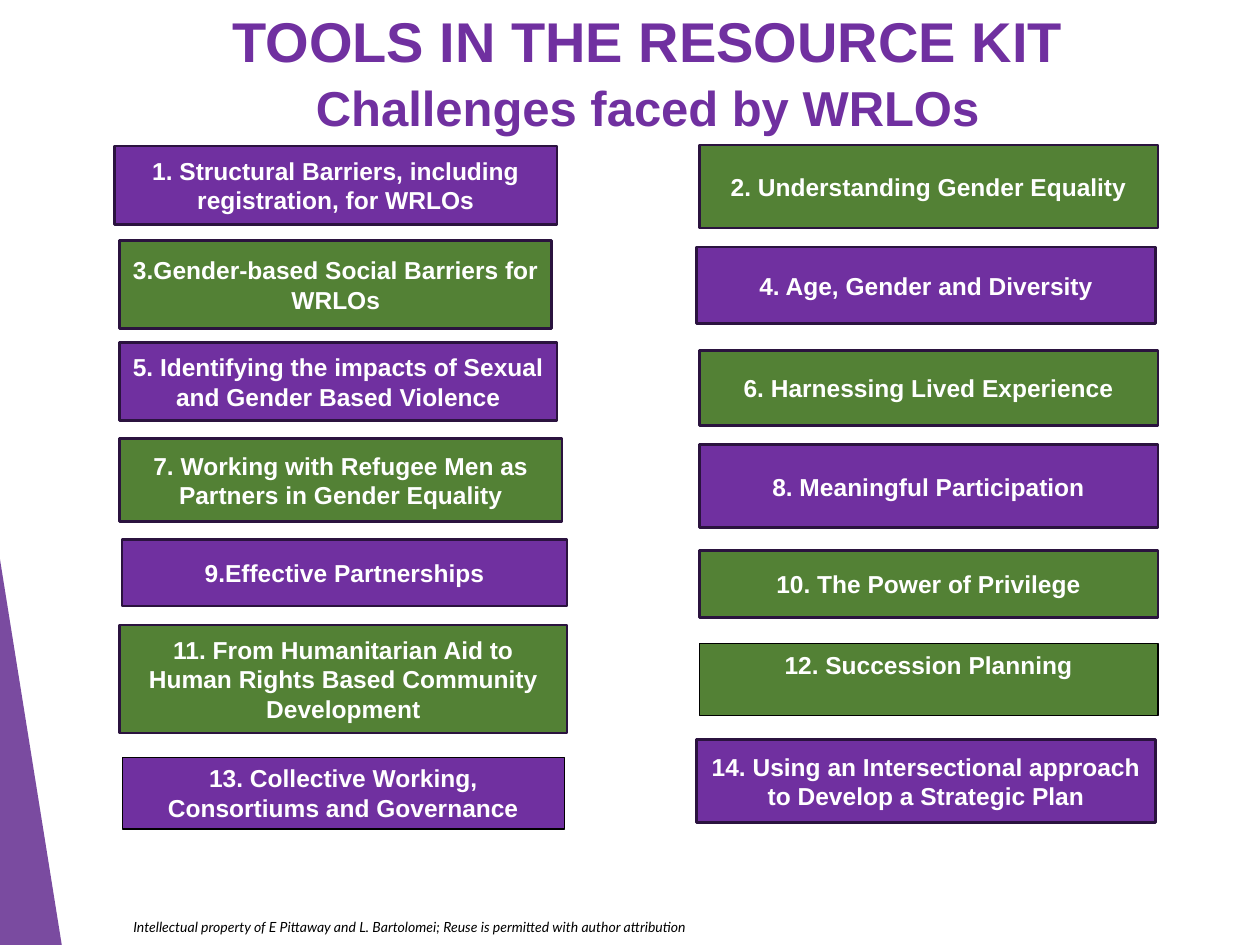
"""Build the slide listing the resource kit tools on challenges faced by WRLOs."""
from lxml import etree
from pptx import Presentation
from pptx.dml.color import RGBColor
from pptx.enum.shapes import MSO_SHAPE
from pptx.enum.text import MSO_ANCHOR, MSO_AUTO_SIZE, PP_ALIGN
from pptx.oxml.ns import qn
from pptx.util import Inches, Pt

COLORS = {
    "purple": "7030A0",
    "green": "538135",
    "edge": "2B133F",
    "wedge": "632C90",
    "white": "FFFFFF",
    "black": "000000",
}


def color(name):
    return RGBColor.from_string(COLORS[name])


def write(paragraph, text, size=14, font="Arial", fill="white", bold=True,
          italic=False, align=PP_ALIGN.CENTER):
    paragraph.alignment = align
    run = paragraph.add_run()
    run.text = text
    run.font.size = Pt(size)
    run.font.name = font
    run.font.bold = bold
    run.font.italic = italic
    run.font.color.rgb = color(fill)


prs = Presentation()
prs.slide_width, prs.slide_height = Inches(10), Inches(7.5)
slide = prs.slides.add_slide(prs.slide_layouts[5])

outline = slide.shapes.build_freeform(0, Inches(4.44))
outline.add_line_segments([(Inches(0.49), Inches(7.5)), (0, Inches(7.5))], close=True)
wedge = outline.convert_to_shape()
wedge.shadow.inherit = False
wedge.line.fill.background()
wedge.fill.solid()
wedge.fill.fore_color.rgb = color("wedge")
wedge_color = wedge.fill._xPr.find(qn("a:solidFill"))[0]
etree.SubElement(wedge_color, qn("a:alpha")).set("val", "85000")

footer = slide.shapes.add_textbox(Inches(0.96), Inches(7.24), Inches(5.8), Inches(0.23))
footer.text_frame.word_wrap = True
write(footer.text_frame.paragraphs[0],
      "Intellectual property of E Pittaway and L. Bartolomei; Reuse is permitted with author attribution",
      size=8, font="Lato", fill="black", bold=False, italic=True, align=PP_ALIGN.LEFT)

title = slide.shapes.title
title.left, title.top = Inches(0.88), Inches(0)
title.width, title.height = Inches(8.52), Inches(1.08)
heading = title.text_frame
heading.auto_size = MSO_AUTO_SIZE.NONE
heading.vertical_anchor = MSO_ANCHOR.TOP
write(heading.paragraphs[0], "TOOLS IN THE RESOURCE KIT", size=32, fill="purple")
subtitle = heading.add_paragraph()
subtitle.space_before = Pt(2)
write(subtitle, "Challenges faced by WRLOs", size=28, fill="purple")

tools = [
    ("1. Structural Barriers, including registration, for WRLOs", "purple", 0.91, 1.16, 3.51, 0.62),
    ("2. Understanding Gender Equality", "green", 5.55, 1.15, 3.64, 0.66),
    ("3.Gender-based Social Barriers for WRLOs", "green", 0.95, 1.91, 3.43, 0.7),
    ("4. Age, Gender and Diversity", "purple", 5.53, 1.96, 3.64, 0.61),
    ("5. Identifying the impacts of Sexual and Gender Based Violence", "purple", 0.95, 2.72, 3.47, 0.62),
    ("6. Harnessing Lived Experience", "green", 5.55, 2.78, 3.64, 0.6),
    ("7. Working with Refugee Men as Partners in Gender Equality", "green", 0.95, 3.48, 3.51, 0.66),
    ("8. Meaningful Participation", "purple", 5.55, 3.53, 3.64, 0.66),
    ("9.Effective Partnerships", "purple", 0.97, 4.28, 3.53, 0.53),
    ("10. The Power of Privilege", "green", 5.55, 4.37, 3.64, 0.53),
    ("11. From Humanitarian Aid to Human Rights Based Community Development",
     "green", 0.95, 4.96, 3.55, 0.86),
    ("12. Succession Planning", "green", 5.55, 5.11, 3.64, 0.57),
    ("13. Collective Working, Consortiums and Governance", "purple", 0.97, 6.01, 3.51, 0.57),
    ("14. Using an Intersectional approach to Develop a Strategic Plan",
     "purple", 5.53, 5.87, 3.64, 0.66),
]
for label, fill, *bounds in tools:
    thin = label.startswith(("12.", "13."))
    tool = slide.shapes.add_shape(MSO_SHAPE.RECTANGLE, *map(Inches, bounds))
    tool.shadow.inherit = False
    tool.fill.solid()
    tool.fill.fore_color.rgb = color(fill)
    tool.line.color.rgb = color("black" if thin else "edge")
    tool.line.width = Pt(0.75 if thin else 1.5)
    tool.text_frame.word_wrap = True
    tool.text_frame.vertical_anchor = MSO_ANCHOR.TOP if thin else MSO_ANCHOR.MIDDLE
    write(tool.text_frame.paragraphs[0], label)

prs.save("out.pptx")
